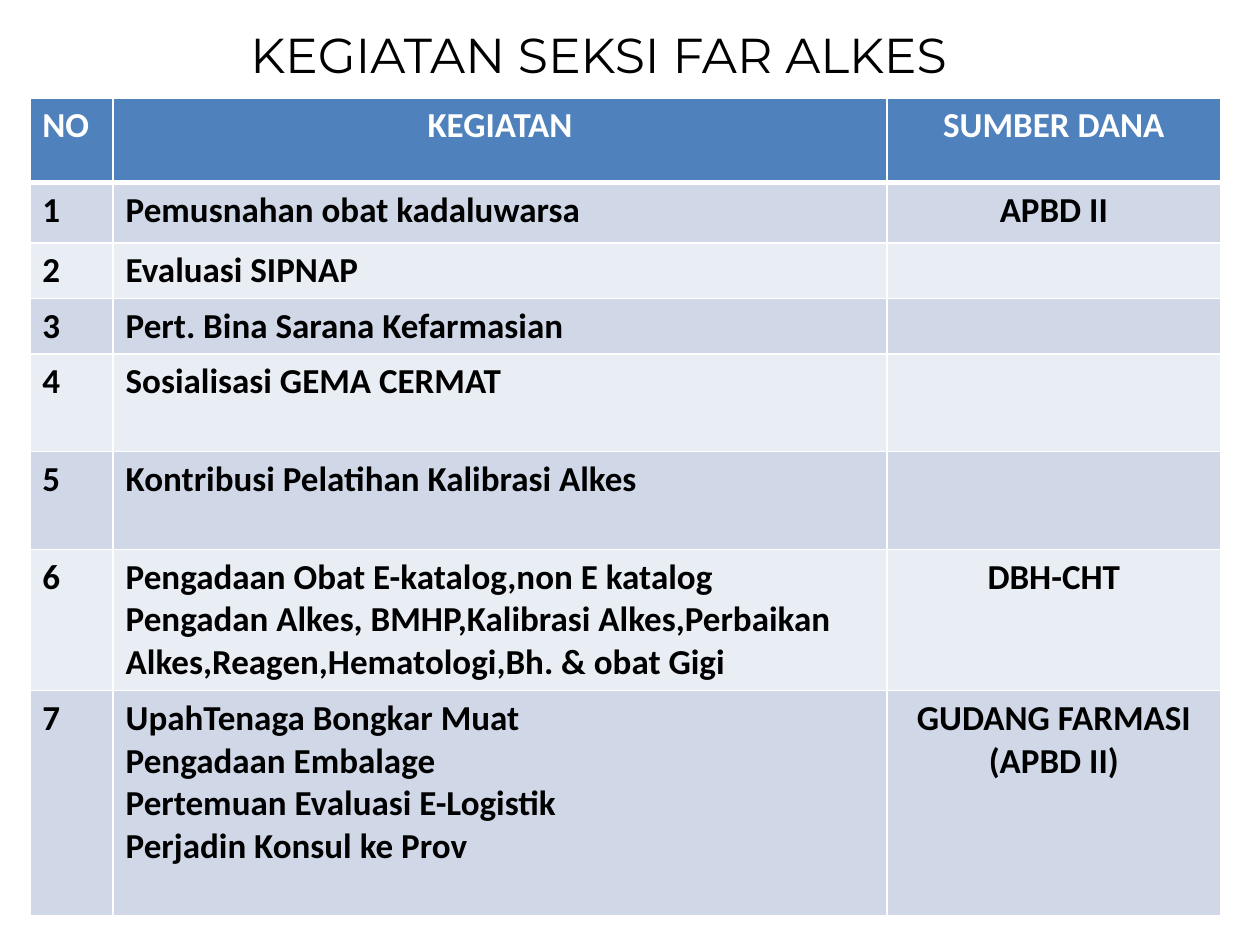
import lxml.etree
import pptx
import pptx.dml.color
import pptx.enum.text
import pptx.oxml.ns
import pptx.util
from pptx.util import Cm

BLACK = pptx.dml.color.RGBColor(0x00, 0x00, 0x00)
WHITE = pptx.dml.color.RGBColor(0xFF, 0xFF, 0xFF)
HEADER_BLUE = pptx.dml.color.RGBColor(0x4F, 0x81, 0xBD)
BAND_DARK = pptx.dml.color.RGBColor(0xD0, 0xD8, 0xE8)
BAND_LIGHT = pptx.dml.color.RGBColor(0xE9, 0xED, 0xF4)

CENTER = pptx.enum.text.PP_ALIGN.CENTER
LEFT = pptx.enum.text.PP_ALIGN.LEFT

TITLE = "KEGIATAN SEKSI FAR ALKES"
HEADINGS = ("NO", "KEGIATAN", "SUMBER DANA")
ACTIVITIES = [
    (["Pemusnahan obat kadaluwarsa"], ["APBD II"]),
    (["Evaluasi SIPNAP"], []),
    (["Pert. Bina Sarana Kefarmasian"], []),
    (["Sosialisasi GEMA CERMAT"], []),
    (["Kontribusi Pelatihan Kalibrasi Alkes"], []),
    (["Pengadaan Obat E-katalog,non E katalog",
      "Pengadan Alkes, BMHP,Kalibrasi Alkes,Perbaikan "
      "Alkes,Reagen,Hematologi,Bh. & obat Gigi"], ["DBH-CHT"]),
    (["UpahTenaga Bongkar Muat", "Pengadaan Embalage",
      "Pertemuan Evaluasi E-Logistik", "Perjadin Konsul ke Prov"],
     ["GUDANG FARMASI", "(APBD II)"]),
]
COLUMN_WIDTHS = (1.68, 15.6, 6.73)
ROW_HEIGHTS = (1.7, 1.22, 1.12, 1.12, 1.97, 1.97, 2.84, 4.55)


def add_text(paragraph, text, font_name, size, color, bold, alignment):
    paragraph.alignment = alignment
    run = paragraph.add_run()
    run.text = text
    run.font.name = font_name
    run.font.size = pptx.util.Pt(size)
    run.font.bold = bold
    run.font.color.rgb = color


def set_borders(cell, bottom_width):
    properties = cell._tc.get_or_add_tcPr()
    widths = {"a:lnL": 1, "a:lnR": 1, "a:lnT": 1, "a:lnB": bottom_width}
    for position, (tag, width) in enumerate(widths.items()):
        line = lxml.etree.Element(pptx.oxml.ns.qn(tag), w=str(pptx.util.Pt(width)))
        fill = lxml.etree.SubElement(line, pptx.oxml.ns.qn("a:solidFill"))
        lxml.etree.SubElement(fill, pptx.oxml.ns.qn("a:srgbClr"), val=str(WHITE))
        properties.insert(position, line)


def fill_cell(cell, lines, fill_color, text_color, alignment, bottom_width):
    cell.fill.solid()
    cell.fill.fore_color.rgb = fill_color
    set_borders(cell, bottom_width)
    for index, line in enumerate(lines):
        frame = cell.text_frame
        paragraph = frame.add_paragraph() if index else frame.paragraphs[0]
        add_text(paragraph, line, "Calibri", 20, text_color, True, alignment)


def place_title(slide, left, top, width, height):
    title = slide.shapes.title
    title.left, title.top, title.width, title.height = left, top, width, height
    frame = title.text_frame
    frame.word_wrap = True
    frame.vertical_anchor = pptx.enum.text.MSO_ANCHOR.MIDDLE
    add_text(frame.paragraphs[0], TITLE, "Montserrat", 28, BLACK, False, CENTER)


def place_activity_table(slide, left, top, width, height):
    table = slide.shapes.add_table(
        len(ROW_HEIGHTS), len(COLUMN_WIDTHS), left, top, width, height).table
    for column, share in zip(table.columns, COLUMN_WIDTHS):
        column.width = int(width * share / sum(COLUMN_WIDTHS))
    for row, share in zip(table.rows, ROW_HEIGHTS):
        row.height = int(height * share / sum(ROW_HEIGHTS))

    for column, heading in enumerate(HEADINGS):
        alignment = CENTER if column else LEFT
        fill_cell(table.cell(0, column), [heading], HEADER_BLUE, WHITE, alignment, 3)
    for number, (activity, funding) in enumerate(ACTIVITIES, start=1):
        band = BAND_DARK if number % 2 else BAND_LIGHT
        contents = ([str(number)], activity, funding)
        for column, lines in enumerate(contents):
            alignment = CENTER if column == 2 else LEFT
            fill_cell(table.cell(number, column), lines, band, BLACK, alignment, 1)


def main():
    presentation = pptx.Presentation()
    presentation.slide_width = Cm(25.4)
    presentation.slide_height = Cm(19.05)
    slide = presentation.slides.add_slide(presentation.slide_layouts[5])
    place_title(slide, Cm(0), Cm(0), Cm(24.13), Cm(2.18))
    place_activity_table(
        slide, Cm(0.6), Cm(1.98), Cm(sum(COLUMN_WIDTHS)), Cm(sum(ROW_HEIGHTS)))
    presentation.save("out.pptx")


if __name__ == "__main__":
    main()
